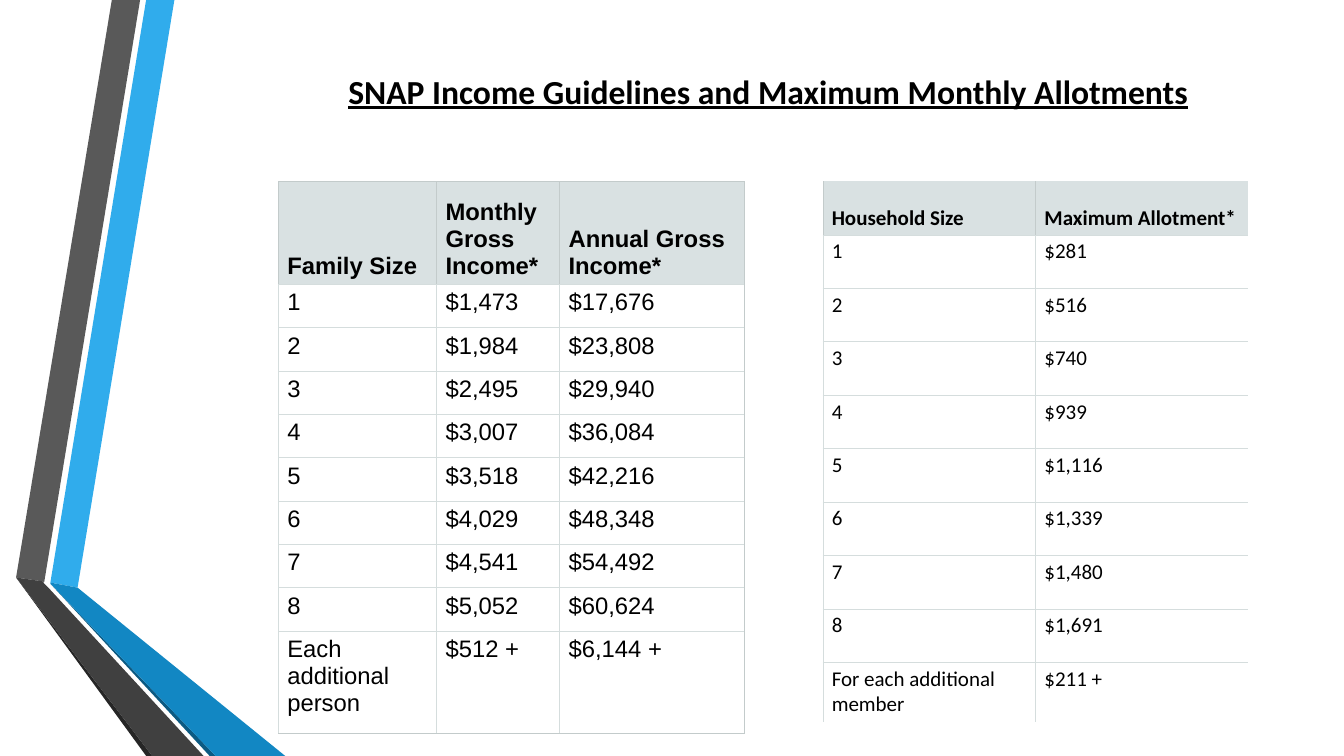
import dataclasses

import lxml.etree
import pptx
import pptx.dml.color
import pptx.enum.text
import pptx.oxml
import pptx.oxml.ns
import pptx.util

Inches = pptx.util.Inches
Pt = pptx.util.Pt

BLACK = "000000"
HEADER_FILL = "D9E1E2"
LIGHT_BORDER = "D5DDDD"
DARK_BORDER = "C3CBCB"


@dataclasses.dataclass(frozen=True)
class Ribbon:
    color: str
    points: list[tuple[float, float]]


@dataclasses.dataclass(frozen=True)
class TableSpec:
    left: float
    top: float
    column_widths: list[float]
    row_heights: list[float]
    rows: list[tuple[str, ...]]
    font: str
    size: float
    margin: float
    body_fill: str | None
    outer_borders: dict[str, str | None]  # outer edges that differ from the grid


RIBBONS = [
    Ribbon("30ACEC", [(0.5, 5.78), (0.77, 5.83), (1.73, 0), (1.45, 0)]),
    Ribbon("595959", [(1.39, 0), (1.11, 0), (0.16, 5.73), (0.44, 5.77)]),
    Ribbon("262626", [(0.16, 5.73), (1.45, 7.5), (1.51, 7.5)]),
    Ribbon("0C5A82", [(0.5, 5.79), (2.08, 7.5), (2.14, 7.5)]),
    Ribbon("1287C3", [(0.5, 5.79), (2.14, 7.5), (2.83, 7.5), (0.77, 5.83), (0.5, 5.78)]),
    Ribbon("404040", [(2.02, 7.5), (0.48, 5.83), (0.43, 5.78), (0.44, 5.77),
                      (0.16, 5.73), (1.51, 7.5)]),
]

INCOME_TABLE = TableSpec(
    left=2.76, top=1.8,
    column_widths=[1.57, 1.22, 1.83],
    row_heights=[1.02] + [0.43] * 8 + [1.02],
    rows=[
        ("Family Size", "Monthly Gross Income*", "Annual Gross Income*"),
        ("1", "$1,473", "$17,676"),
        ("2", "$1,984", "$23,808"),
        ("3", "$2,495", "$29,940"),
        ("4", "$3,007", "$36,084"),
        ("5", "$3,518", "$42,216"),
        ("6", "$4,029", "$48,348"),
        ("7", "$4,541", "$54,492"),
        ("8", "$5,052", "$60,624"),
        ("Each additional person", "$512 +", "$6,144 +"),
    ],
    font="Arial", size=17, margin=0.05, body_fill=None,
    outer_borders={"R": DARK_BORDER, "B": DARK_BORDER},
)

ALLOTMENT_TABLE = TableSpec(
    left=8.16, top=1.8,
    column_widths=[2.11] * 2,
    row_heights=[0.53] * 10,
    rows=[
        ("Household Size", "Maximum Allotment*"),
        ("1", "$281"),
        ("2", "$516"),
        ("3", "$740"),
        ("4", "$939"),
        ("5", "$1,116"),
        ("6", "$1,339"),
        ("7", "$1,480"),
        ("8", "$1,691"),
        ("For each additional member", "$211 +"),
    ],
    font="Calibri", size=15, margin=0.04, body_fill="FFFFFF",
    outer_borders={"T": None, "R": None, "B": None},
)


def rgb(color: str) -> pptx.dml.color.RGBColor:
    return pptx.dml.color.RGBColor.from_string(color)


def add_run(paragraph, text: str, font: str, size: float, bold: bool):
    run = paragraph.add_run()
    run.text = text
    run.font.name = font
    run.font.size = Pt(size)
    run.font.bold = bold
    run.font.color.rgb = rgb(BLACK)
    return run


def add_ribbon(slide, ribbon: Ribbon) -> None:
    start, *others = [(Inches(x), Inches(y)) for x, y in ribbon.points]
    builder = slide.shapes.build_freeform(*start)
    builder.add_line_segments(others, close=True)
    shape = builder.convert_to_shape()
    shape.shadow.inherit = False
    shape.fill.solid()
    shape.fill.fore_color.rgb = rgb(ribbon.color)
    shape.line.fill.background()


def border_color(spec: TableSpec, row: int, column: int, edge: str) -> str | None:
    is_outer = {
        "L": column == 0,
        "R": column == len(spec.column_widths) - 1,
        "T": row == 0,
        "B": row == len(spec.rows) - 1,
    }[edge]
    if is_outer and edge in spec.outer_borders:
        return spec.outer_borders[edge]
    return DARK_BORDER if row == 0 and edge != "B" else LIGHT_BORDER


def set_border(cell, position: int, edge: str, color: str | None) -> None:
    qn = pptx.oxml.ns.qn
    line = lxml.etree.Element(qn(f"a:ln{edge}"), w=str(Pt(0.38)))
    if color is None:
        lxml.etree.SubElement(line, qn("a:noFill"))
    else:
        fill = lxml.etree.SubElement(line, qn("a:solidFill"))
        lxml.etree.SubElement(fill, qn("a:srgbClr"), val=color)
    cell._tc.get_or_add_tcPr().insert(position, line)


def fill_cell(cell, spec: TableSpec, row: int, column: int) -> None:
    is_header = row == 0
    cell.margin_left = cell.margin_right = Inches(0.09)
    cell.margin_top = cell.margin_bottom = Inches(spec.margin)
    anchor = pptx.enum.text.MSO_ANCHOR
    cell.vertical_anchor = anchor.BOTTOM if is_header else anchor.TOP
    color = HEADER_FILL if is_header else spec.body_fill
    if color is None:
        cell.fill.background()
    else:
        cell.fill.solid()
        cell.fill.fore_color.rgb = rgb(color)
    for position, edge in enumerate("LRTB"):
        set_border(cell, position, edge, border_color(spec, row, column, edge))
    add_run(cell.text_frame.paragraphs[0], spec.rows[row][column],
            spec.font, spec.size, is_header)


def add_table(slide, spec: TableSpec) -> None:
    table = slide.shapes.add_table(
        len(spec.rows), len(spec.column_widths), Inches(spec.left), Inches(spec.top),
        Inches(sum(spec.column_widths)), Inches(sum(spec.row_heights))).table
    table.first_row = False
    table.horz_banding = False
    for column, width in zip(table.columns, spec.column_widths):
        column.width = Inches(width)
    for row, height in zip(table.rows, spec.row_heights):
        row.height = Inches(height)
    for row in range(len(spec.rows)):
        for column in range(len(spec.column_widths)):
            fill_cell(table.cell(row, column), spec, row, column)


def add_title(slide, text: str) -> None:
    shape = slide.shapes.add_textbox(Inches(2.26), Inches(0.65), Inches(10.72), Inches(0.5))
    shape.text_frame.word_wrap = True
    shape.text_frame.auto_size = pptx.enum.text.MSO_AUTO_SIZE.SHAPE_TO_FIT_TEXT
    paragraph = shape.text_frame.paragraphs[0]
    paragraph.alignment = pptx.enum.text.PP_ALIGN.CENTER
    add_run(paragraph, text, "Calibri", 24, True).font.underline = True


def main() -> None:
    presentation = pptx.Presentation()
    presentation.slide_width = Inches(13.33)
    presentation.slide_height = Inches(7.5)
    slide = presentation.slides.add_slide(presentation.slide_layouts[6])

    # Folded ribbons on the left edge
    for ribbon in RIBBONS:
        add_ribbon(slide, ribbon)

    # Income limits and allotments
    for spec in (INCOME_TABLE, ALLOTMENT_TABLE):
        add_table(slide, spec)

    add_title(slide, "SNAP Income Guidelines and Maximum Monthly Allotments")
    presentation.save("out.pptx")


if __name__ == "__main__":
    main()
